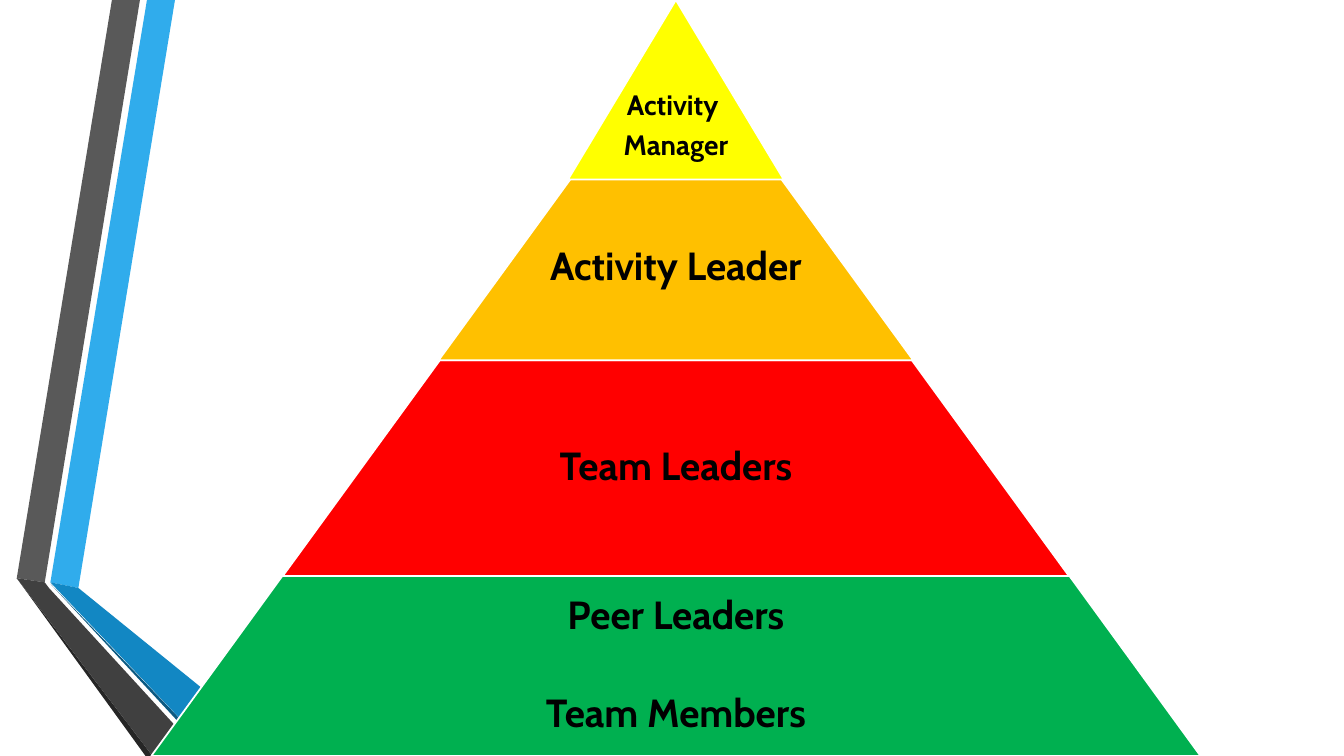
"""Build a slide with a four-tier leadership pyramid beside a folded ribbon."""
from dataclasses import dataclass

from pptx import Presentation
from pptx.dml.color import RGBColor
from pptx.enum.shapes import MSO_SHAPE
from pptx.enum.text import MSO_ANCHOR, PP_ALIGN
from pptx.slide import Slide
from pptx.util import Pt


@dataclass(frozen=True)
class Theme:
    font: str = "Cabin"
    text: str = "000000"
    outline: str = "FFFFFF"
    outline_width: float = 1.25
    large: int = 28
    small: int = 20
    blue: str = "30ACEC"
    blue_fold: str = "1287C3"
    blue_edge: str = "0C5A82"
    grey: str = "595959"
    grey_fold: str = "404040"
    grey_edge: str = "262626"
    green: str = "00B050"
    red: str = "FF0000"
    amber: str = "FFC000"
    yellow: str = "FFFF00"


@dataclass(frozen=True)
class Ribbon:
    color: str
    points: tuple[tuple[float, float], ...]


@dataclass(frozen=True)
class Tier:
    lines: tuple[str, ...]
    color: str
    top: float
    width: float
    height: float
    size: int
    label_share: float = 0.65
    label_drop: float = 0
    space_after: float = 0
    inset: float = 2.8


THEME = Theme()
SLIDE_WIDTH, SLIDE_HEIGHT = 960, 540
PYRAMID_CENTER = 482.8
SLOPE = 0.728

RIBBONS = (
    Ribbon(THEME.blue, ((36, 416.2), (55.6, 419.6), (124.6, 0), (104.6, 0))),
    Ribbon(THEME.grey, ((100, 0), (80, 0), (11.8, 412.6), (31.7, 415.6))),
    Ribbon(THEME.grey_edge, ((11.8, 412.6), (104.4, 540), (108.7, 540))),
    Ribbon(THEME.blue_edge, ((36, 416.8), (149.8, 540), (154.1, 540))),
    Ribbon(THEME.blue_fold, ((36, 416.4), (154.1, 540), (203.8, 540), (55.6, 419.6))),
    Ribbon(THEME.grey_fold, ((145.4, 540), (34.6, 419.8), (31.7, 415.6), (11.8, 412.6), (108.7, 540))),
)

TIERS = (
    Tier(("Peer Leaders", "Team Members"), THEME.green, 411.1, 749.5, 128.9, THEME.large, space_after=39.5),
    Tier(("Team Leaders",), THEME.red, 257.4, 561.6, 154.1, THEME.large),
    Tier(("Activity Leader",), THEME.amber, 125.6, 339.1, 131.8, THEME.large),
    Tier(("Activity ", "Manager"), THEME.yellow, 0, 154.1, 128.2, THEME.small,
         label_share=1, label_drop=26, space_after=7, inset=1.4),
)


def draw_ribbon(slide: Slide, ribbon: Ribbon) -> None:
    start, *others = ribbon.points
    builder = slide.shapes.build_freeform(*start, scale=Pt(1))
    builder.add_line_segments(others, close=True)
    shape = builder.convert_to_shape()
    shape.shadow.inherit = False
    shape.fill.solid()
    shape.fill.fore_color.rgb = RGBColor.from_string(ribbon.color)
    shape.line.fill.background()


def draw_tier(slide: Slide, tier: Tier) -> None:
    shape = slide.shapes.add_shape(
        MSO_SHAPE.TRAPEZOID, Pt(PYRAMID_CENTER - tier.width / 2), Pt(tier.top), Pt(tier.width), Pt(tier.height)
    )
    shape.adjustments[0] = SLOPE
    shape.shadow.inherit = False
    shape.fill.solid()
    shape.fill.fore_color.rgb = RGBColor.from_string(tier.color)
    shape.line.color.rgb = RGBColor.from_string(THEME.outline)
    shape.line.width = Pt(THEME.outline_width)


def draw_label(slide: Slide, tier: Tier) -> None:
    width = tier.width * tier.label_share
    label = slide.shapes.add_textbox(
        Pt(PYRAMID_CENTER - width / 2), Pt(tier.top + tier.label_drop), Pt(width), Pt(tier.height)
    )
    frame = label.text_frame
    frame.word_wrap = True
    frame.vertical_anchor = MSO_ANCHOR.MIDDLE
    frame.margin_left = frame.margin_right = Pt(tier.inset)
    frame.margin_top = frame.margin_bottom = Pt(tier.inset)
    frame.text = "\n".join(tier.lines)
    for paragraph in frame.paragraphs:
        paragraph.alignment = PP_ALIGN.CENTER
        paragraph.line_spacing = 0.9
        paragraph.font.name = THEME.font
        paragraph.font.size = Pt(tier.size)
        paragraph.font.bold = True
        paragraph.font.color.rgb = RGBColor.from_string(THEME.text)
    for paragraph in frame.paragraphs[:-1]:
        paragraph.space_after = Pt(tier.space_after)


def main() -> None:
    presentation = Presentation()
    presentation.slide_width = Pt(SLIDE_WIDTH)
    presentation.slide_height = Pt(SLIDE_HEIGHT)
    slide = presentation.slides.add_slide(presentation.slide_layouts.get_by_name("Blank"))
    for ribbon in RIBBONS:
        draw_ribbon(slide, ribbon)
    for tier in TIERS:
        draw_tier(slide, tier)
        draw_label(slide, tier)
    presentation.save("out.pptx")


if __name__ == "__main__":
    main()
